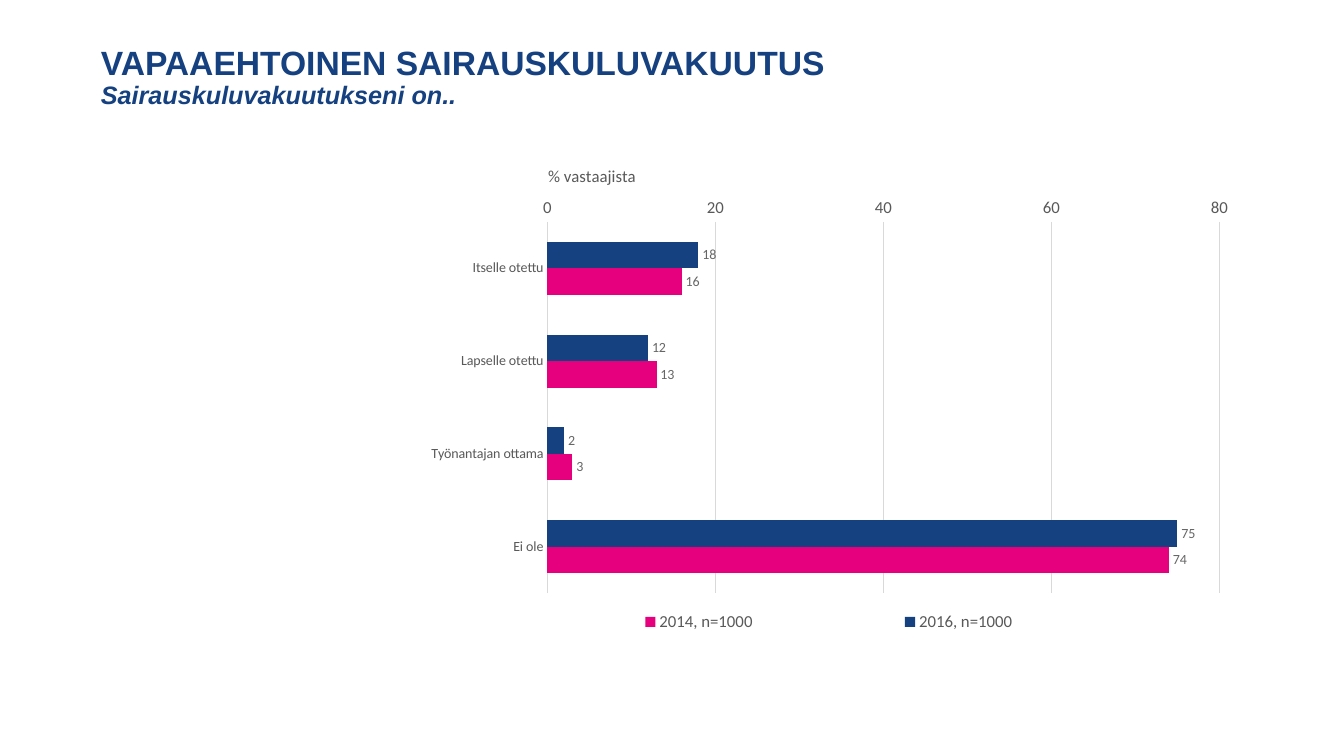
from lxml import etree
from pptx import Presentation
from pptx.chart.data import CategoryChartData
from pptx.dml.color import RGBColor
from pptx.enum.chart import (XL_CHART_TYPE, XL_LABEL_POSITION as LabelPosition,
                             XL_LEGEND_POSITION as LegendPosition, XL_TICK_MARK as TickMark)
from pptx.enum.text import MSO_ANCHOR
from pptx.oxml.ns import qn
from pptx.util import Pt

# Content
HEADING = [  # text, size, italic
    ("VAPAAEHTOINEN SAIRAUSKULUVAKUUTUS", 24, False),
    ("Sairauskuluvakuutukseni on..", 18, True),
]
CHART_TITLE = "% vastaajista"
CATEGORIES = ["Itselle otettu", "Lapselle otettu", "Työnantajan ottama", "Ei ole"]
SERIES = [  # name, values, colour
    ("2016, n=1000", (18, 12, 2, 75), "164180"),
    ("2014, n=1000", (16, 13, 3, 74), "E6007E"),
]
BLUE, GREY, LABEL_GREY, RULE = "164180", "595959", "666666", "D9D9D9"

# Geometry in px: left, top, width, height
PAGE_SIZE = (1344, 756)
HEADING_BOX = (91, 19, 1163, 119)
CHART_BOX = (93, 152, 1159, 492)
# Shares of the chart: left, top, width, height
PLOT_AREA = (0.392, 0.142, 0.58, 0.755)
TITLE_SPOT = (0.39, 0.02)
LEGEND_AREA = (0.35, 0.92, 0.57, 0.07)


def px(length):
    return round(length * 914400 / 100.8)


def colour(value):
    return RGBColor.from_string(value)


def style(font, size, shade, name="Calibri"):
    font.size, font.name, font.bold = Pt(size), name, False
    font.color.rgb = colour(shade)


def rule(line):
    line.color.rgb = colour(RULE)
    line.width = Pt(0.75)


def place(element, index, shares, inner=False):
    """Give a chart part a fixed place within the chart."""
    for old in element.findall(qn("c:layout")):
        element.remove(old)
    layout = etree.Element(qn("c:layout"))
    manual = etree.SubElement(layout, qn("c:manualLayout"))
    settings = [("layoutTarget", "inner")] if inner else []
    settings += [("xMode", "edge"), ("yMode", "edge"), *zip("xywh", shares)]
    for tag, value in settings:
        etree.SubElement(manual, qn("c:" + tag)).set("val", str(value))
    element.insert(index, layout)


def add_heading(page):
    frame = page.shapes.add_textbox(*map(px, HEADING_BOX)).text_frame
    frame.word_wrap = True
    frame.vertical_anchor = MSO_ANCHOR.MIDDLE
    para = frame.paragraphs[0]
    para.line_spacing = 0.9
    for number, (text, size, italic) in enumerate(HEADING):
        if number:
            para.add_line_break()
        span = para.add_run()
        span.text = text
        style(span.font, size, BLUE, "Arial")
        span.font.bold, span.font.italic = True, italic


def add_bars(page):
    data = CategoryChartData(number_format="0")
    data.categories = CATEGORIES
    for name, values, _ in SERIES:
        data.add_series(name, values)
    chart = page.shapes.add_chart(
        XL_CHART_TYPE.BAR_CLUSTERED, *map(px, CHART_BOX), data).chart
    style(chart.font, 10, "000000")

    # Title
    title = chart.chart_title
    span = title.text_frame.paragraphs[0].add_run()
    span.text = CHART_TITLE
    style(span.font, 12, GREY)

    # Axes
    names, scale = chart.category_axis, chart.value_axis
    for axis, size in ((names, 10), (scale, 12)):
        axis.major_tick_mark = axis.minor_tick_mark = TickMark.NONE
        style(axis.tick_labels.font, size, GREY)
    names.reverse_order = True
    rule(names.format.line)
    scale.minimum_scale, scale.maximum_scale, scale.major_unit = 0, 80, 20
    scale.format.line.fill.background()
    rule(scale.major_gridlines.format.line)

    # Bars and their values
    plot = chart.plots[0]
    plot.gap_width, plot.overlap, plot.vary_by_categories = 150, 0, False
    for bars, (_, _, shade) in zip(plot.series, SERIES):
        bars.format.fill.solid()
        bars.format.fill.fore_color.rgb = colour(shade)
        labels = bars.data_labels
        labels.show_value = True
        labels.position = LabelPosition.OUTSIDE_END
        style(labels.font, 10, LABEL_GREY)

    # Legend
    chart.has_legend = True
    legend = chart.legend
    legend.position = LegendPosition.BOTTOM
    legend.include_in_layout = False
    style(legend.font, 12, GREY)

    # Fixed places
    plot_area = chart.element.find(".//" + qn("c:plotArea"))
    place(plot_area, 0, PLOT_AREA, inner=True)
    place(chart.element.find(".//" + qn("c:title")), 1, TITLE_SPOT)
    place(chart.element.find(".//" + qn("c:legend")), 1, LEGEND_AREA)


def main():
    deck = Presentation()
    deck.slide_width, deck.slide_height = map(px, PAGE_SIZE)
    page = deck.slides.add_slide(deck.slide_layouts[6])
    add_bars(page)
    add_heading(page)
    deck.save("out.pptx")


if __name__ == "__main__":
    main()
